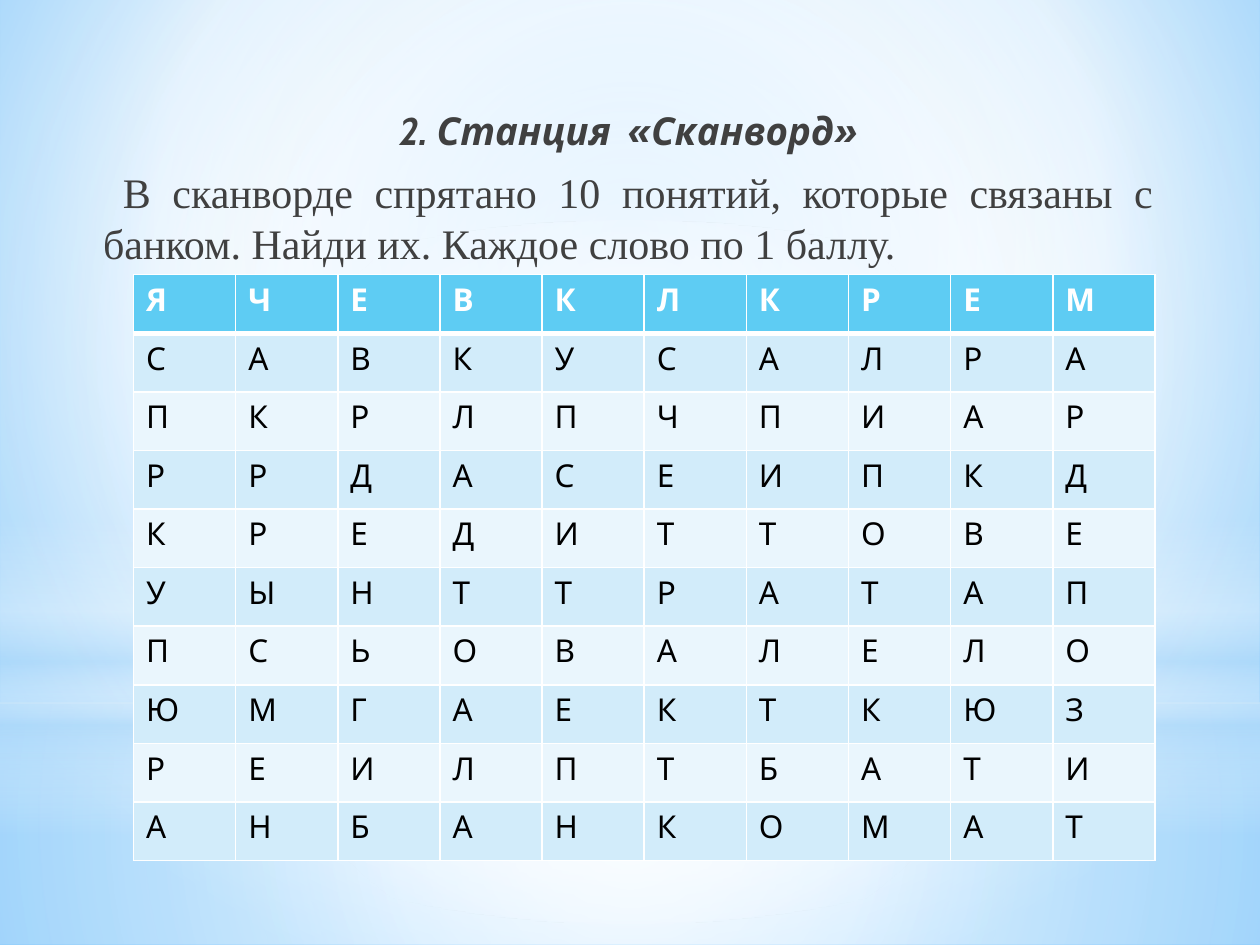
from lxml import etree
from pptx import Presentation, util as u
from pptx.dml.color import RGBColor
from pptx.enum import shapes, text
from pptx.oxml.ns import qn

W, H = 10, 7.5
FONT, BODY_FONT = "Cabin", "Times New Roman"
DARK, WHITE, BLACK = "404040", "FFFFFF", "000000"
HEADER_FILL, BAND_FILLS = "5ECCF3", ("D2ECFA", "EAF6FD")
CENTRE = (50, 50, 50, 50)
LETTERS = (
    "ЯЧЕВКЛКРЕМ",
    "САВКУСАЛРА",
    "ПКРЛПЧПИАР",
    "РРДАСЕИПКД",
    "КРЕДИТТОВЕ",
    "УЫНТТРАТАП",
    "ПСЬОВАЛЕЛО",
    "ЮМГАЕКТКЮЗ",
    "РЕИЛПТБАТИ",
    "АНБАНКОМАТ",
)


def rgb(code):
    return RGBColor.from_string(code)


def sub(parent, tag, **attrs):
    """Append an XML child, writing each attribute as text."""
    return etree.SubElement(parent, qn(tag), {k: str(v) for k, v in attrs.items()})


def set_gradient(owner, props, stops, focus=None):
    """Fill with (position, colour, opacity) stops: circular around focus, else downwards."""
    owner.fill.background()
    grad = etree.Element(qn("a:gradFill"), rotWithShape="1")
    stop_list = sub(grad, "a:gsLst")
    for pos, code, opacity in stops:
        color = sub(sub(stop_list, "a:gs", pos=pos * 1000), "a:srgbClr", val=code)
        if opacity < 100:
            sub(color, "a:alpha", val=opacity * 1000)
    if focus:
        sides = {side: share * 1000 for side, share in zip("ltrb", focus)}
        sub(sub(grad, "a:path", path="circle"), "a:fillToRect", **sides)
    else:
        sub(grad, "a:lin", ang=90 * 60000, scaled=0)
    props.replace(props.find(qn("a:noFill")), grad)


def add_glow(s, kind, top, height, stops, focus=None):
    """Add a full-width gradient layer; top and height are shares of the slide."""
    sp = s.shapes.add_shape(kind, 0, u.Inches(top * H), u.Inches(W), u.Inches(height * H))
    sp.shadow.inherit = False
    sp.line.fill.background()
    set_gradient(sp, sp._element.spPr, stops, focus)


def add_backdrop(s):
    s.background.fill.background()
    set_gradient(s.background, s._element.cSld.bg.bgPr,
                 [(0, "9ED5FF", 100), (60, WHITE, 100), (100, "5BB9FF", 100)],
                 (20, 10, 20, 60))
    rect, oval = shapes.MSO_SHAPE.RECTANGLE, shapes.MSO_SHAPE.OVAL
    haze = "B4DCFA"
    horizon = 0.744
    add_glow(s, rect, horizon, 1 - horizon,
             [(0, WHITE, 91), (37, WHITE, 76), (100, haze, 79)], CENTRE)
    add_glow(s, rect, 0, horizon,
             [(0, WHITE, 89), (48, WHITE, 62), (100, haze, 79)], CENTRE)
    add_glow(s, rect, 0.55, 1 / 3,
             [(0, WHITE, 0), (29, WHITE, 30), (45, haze, 40),
              (55, WHITE, 26), (65, haze, 60), (100, WHITE, 0)])
    add_glow(s, oval, 0.233, horizon, [(0, WHITE, 100), (56, WHITE, 0)], CENTRE)


def add_run(p, words, color, **font):
    r = p.add_run()
    r.text = words
    r.font.color.rgb = rgb(color)
    for name, value in font.items():
        setattr(r.font, name, value)


def add_paragraph(p, align, runs):
    p.alignment = align
    p.space_before, p.space_after = u.Pt(4.8), u.Pt(3)
    p._p.get_or_add_pPr().set("marL", str(u.Inches(0.05)))
    for words, font in runs:
        add_run(p, words, DARK, **font)


def add_task(s):
    box = s.shapes.add_textbox(u.Inches(0.67), u.Inches(0.8), u.Inches(8.58), u.Inches(3.8))
    tf = box.text_frame
    tf.word_wrap = True
    heading = dict(name=FONT, size=u.Pt(22))
    add_paragraph(tf.paragraphs[0], text.PP_ALIGN.CENTER,
                  [("2. Станция  «Сканворд»", dict(heading, bold=True, italic=True))])
    add_paragraph(tf.add_paragraph(), text.PP_ALIGN.JUSTIFY, [
        (" ", heading),
        ("В сканворде спрятано 10 понятий, которые связаны с банком. "
         "Найди их. Каждое слово по 1 баллу.", dict(name=BODY_FONT, size=u.Pt(24)))])


def set_borders(cell, **widths):
    """Draw white cell borders, 1 pt unless a width is given for a side."""
    props = cell._tc.get_or_add_tcPr()
    for side in "LRTB":
        line = sub(props, "a:ln" + side, w=u.Pt(widths.get(side, 1)))
        sub(sub(line, "a:solidFill"), "a:srgbClr", val=WHITE)


def add_letter_grid(s):
    rows, cols = len(LETTERS), len(LETTERS[0])
    table = s.shapes.add_table(rows, cols, u.Inches(1.06), u.Inches(2.18),
                               u.Inches(8.11), u.Inches(4.65)).table
    for i, word in enumerate(LETTERS):
        header = i == 0
        fill = HEADER_FILL if header else BAND_FILLS[(i - 1) % 2]
        widths = {0: {"B": 3}, 1: {"T": 3}}.get(i, {})
        for j, letter in enumerate(word):
            cell = table.cell(i, j)
            set_borders(cell, **widths)
            cell.fill.solid()
            cell.fill.fore_color.rgb = rgb(fill)
            add_run(cell.text_frame.paragraphs[0], letter, WHITE if header else BLACK,
                    name=FONT, size=u.Pt(18), bold=header)


def main():
    prs = Presentation()
    prs.slide_width, prs.slide_height = u.Inches(W), u.Inches(H)
    s = prs.slides.add_slide(prs.slide_layouts[6])
    add_backdrop(s)
    add_task(s)
    add_letter_grid(s)
    prs.save("out.pptx")


if __name__ == "__main__":
    main()
